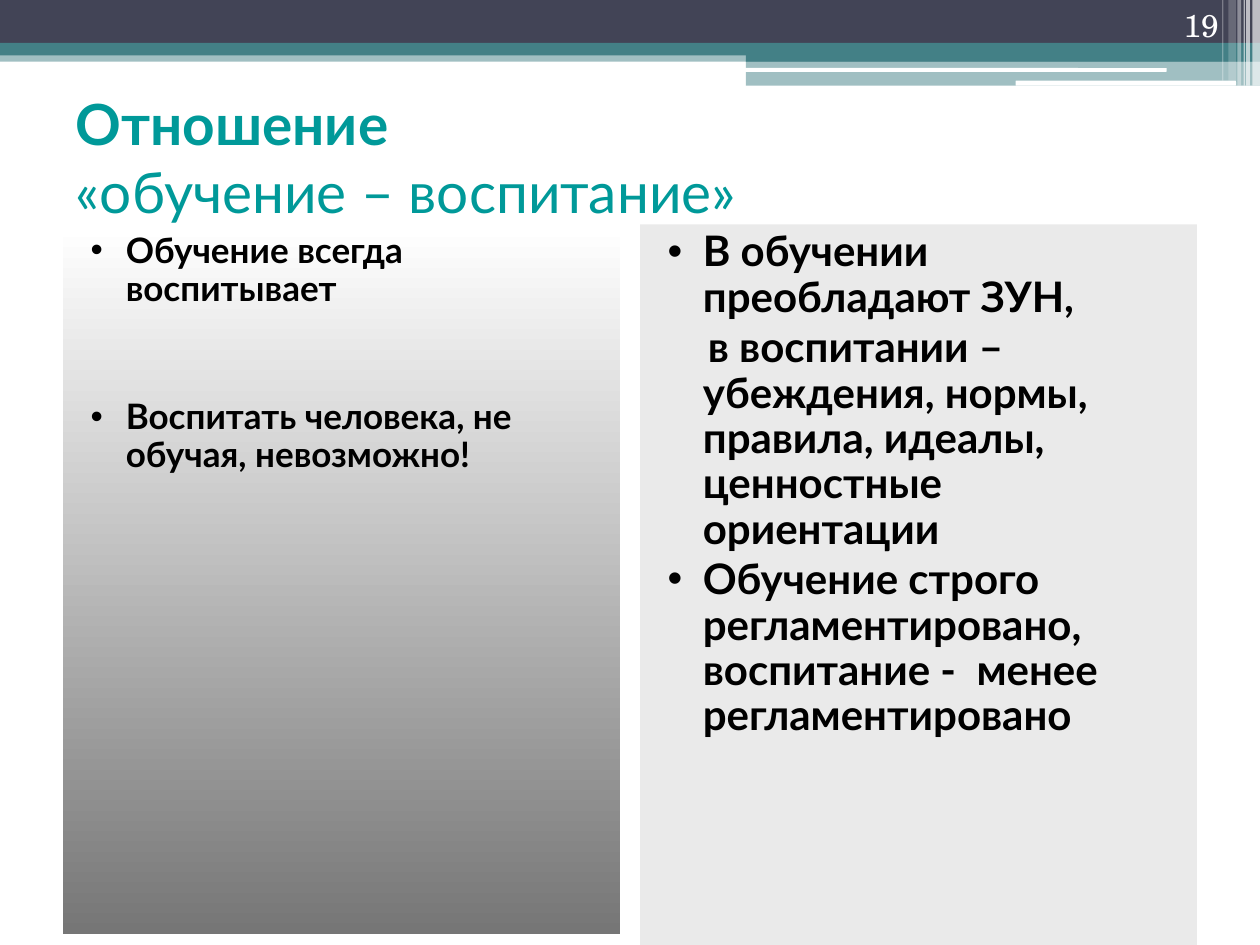
from dataclasses import dataclass

from pptx import Presentation
from pptx.dml.color import RGBColor
from pptx.enum import shapes, text
from pptx.oxml import ns, xmlchemy as xc
from pptx.util import Inches, Pt


@dataclass(frozen=True)
class Theme:
    font: str = "Lato"
    serif: str = "TeX Gyre Schola"
    dark: str = "424456"
    teal: str = "438086"
    white: str = "FFFFFF"
    black: str = "000000"
    head: str = "009999"
    grey: str = "767676"
    pale: str = "EAEAEA"
    title: float = 32.4
    small: int = 20
    large: int = 24
    page: int = 18


T = Theme()
RECT = shapes.MSO_SHAPE.RECTANGLE
ROUND = shapes.MSO_SHAPE.ROUNDED_RECTANGLE

# left, top, width, height, colour, opacity in percent
BANDS = [
    (0, 0.4, 10, 0.09, T.teal, 50),
    (0, 0, 10, 0.34, T.dark, 100),
    (0, 0.34, 10, 0.1, T.teal, 100),
    (5.92, 0.39, 4.08, 0.1, T.teal, 100),
    (5.92, 0.48, 4.08, 0.2, T.teal, 50),
]
LINES = [(5.91, 0.54, 3.35, 0.03), (8.06, 0.64, 1.75, 0.04)]
# left, width, height, opacity in percent
STRIPES = [
    (9.94, 0.06, 0.68, 65),
    (9.89, 0.03, 0.68, 65),
    (9.87, 0.01, 0.68, 60),
    (9.82, 0.03, 0.68, 40),
    (9.75, 0.06, 0.64, 20),
    (9.7, 0.01, 0.64, 30),
]
# text, bulleted, first-line indent in inches, space before in points
LEFT = [
    ("Обучение всегда воспитывает", True, -0.28, 3),
    ("Воспитать человека, не обучая, невозможно!", True, -0.28, 52),
]
RIGHT = [
    ("В обучении преобладают ЗУН,", True, -0.28, 3),
    ("в воспитании – убеждения, нормы, правила, идеалы, "
     "ценностные ориентации", False, 0.04, 3),
    ("Обучение строго регламентировано, воспитание -  менее "
     "регламентировано", True, -0.28, 3),
]


def rgb(code):
    return RGBColor.from_string(code)


def add_child(node, tag, **attrs):
    child = xc.OxmlElement(tag)
    for key, val in attrs.items():
        child.set(key, val)
    node.append(child)
    return child


def add_box(slide, box, color, alpha=100, kind=RECT):
    shape = slide.shapes.add_shape(kind, *map(Inches, box))
    shape.shadow.inherit = False
    shape.line.fill.background()
    shape.fill.solid()
    shape.fill.fore_color.rgb = rgb(color)
    if alpha < 100:
        tone = shape.fill._xPr.find(".//" + ns.qn("a:srgbClr"))
        add_child(tone, "a:alpha", val=str(alpha * 1000))
    return shape


def add_run(para, words, size, color, bold=False, font=T.font):
    run = para.add_run()
    run.text = words
    run.font.name = font
    run.font.size = Pt(size)
    run.font.bold = bold
    run.font.color.rgb = rgb(color)


def set_indent(para, first, bullet):
    props = para._p.get_or_add_pPr()
    props.set("marL", str(Inches(0.4)))
    props.set("indent", str(Inches(first)))
    if bullet:
        tint = add_child(props, "a:buClr")
        add_child(tint, "a:srgbClr", val=T.black)
        add_child(props, "a:buFont", typeface="Arial")
        add_child(props, "a:buChar", char="•")
    else:
        add_child(props, "a:buNone")


def add_panel(slide, box, items, size):
    panel = add_box(slide, box, T.pale)
    frame = panel.text_frame
    frame.word_wrap = True
    frame.vertical_anchor = text.MSO_ANCHOR.TOP
    for i, (words, bullet, first, gap) in enumerate(items):
        para = frame.add_paragraph() if i else frame.paragraphs[0]
        para.alignment = text.PP_ALIGN.LEFT
        para.line_spacing = 0.9
        para.space_before = Pt(gap)
        set_indent(para, first, bullet)
        add_run(para, words, size, T.black, True)
    return panel


def fade(shape, top, end):
    """Fill the shape with a gradient running downwards."""
    shape.fill.gradient()
    shape.fill.gradient_angle = 270
    for stop, color in zip(shape.fill.gradient_stops, (top, end)):
        stop.color.rgb = rgb(color)


def add_header(slide):
    for *box, color, alpha in BANDS:
        add_box(slide, box, color, alpha)
    for box in LINES:
        add_box(slide, box, T.white, kind=ROUND)
    for left, width, height, alpha in STRIPES:
        add_box(slide, (left, 0, width, height), T.white, alpha)


def add_number(slide, words):
    box = slide.shapes.add_textbox(*map(Inches, (8.94, 0, 0.83, 0.4)))
    frame = box.text_frame
    frame.word_wrap = True
    frame.vertical_anchor = text.MSO_ANCHOR.BOTTOM
    para = frame.paragraphs[0]
    para.alignment = text.PP_ALIGN.RIGHT
    add_run(para, words, T.page, T.white, font=T.serif)


def set_title(slide):
    title = slide.shapes.title
    title.left, title.top, title.width, title.height = map(
        Inches, (0.5, 0.7, 9, 1.09))
    frame = title.text_frame
    frame.word_wrap = True
    frame.auto_size = text.MSO_AUTO_SIZE.NONE
    frame.vertical_anchor = text.MSO_ANCHOR.MIDDLE
    para = frame.paragraphs[0]
    para.alignment = text.PP_ALIGN.LEFT
    add_run(para, "Отношение ", T.title, T.head, True)
    para.add_line_break()
    add_run(para, "«обучение – воспитание»", T.title, T.head)


def main():
    deck = Presentation()
    deck.slide_width, deck.slide_height = Inches(10), Inches(7.5)
    slide = deck.slides.add_slide(deck.slide_layouts[5])
    add_header(slide)
    add_number(slide, "19")
    set_title(slide)
    panel = add_panel(slide, (0.5, 1.8, 4.42, 5.61), LEFT, T.small)
    fade(panel, T.white, T.grey)
    add_panel(slide, (5.08, 1.78, 4.42, 5.72), RIGHT, T.large)
    deck.save("out.pptx")


if __name__ == "__main__":
    main()
